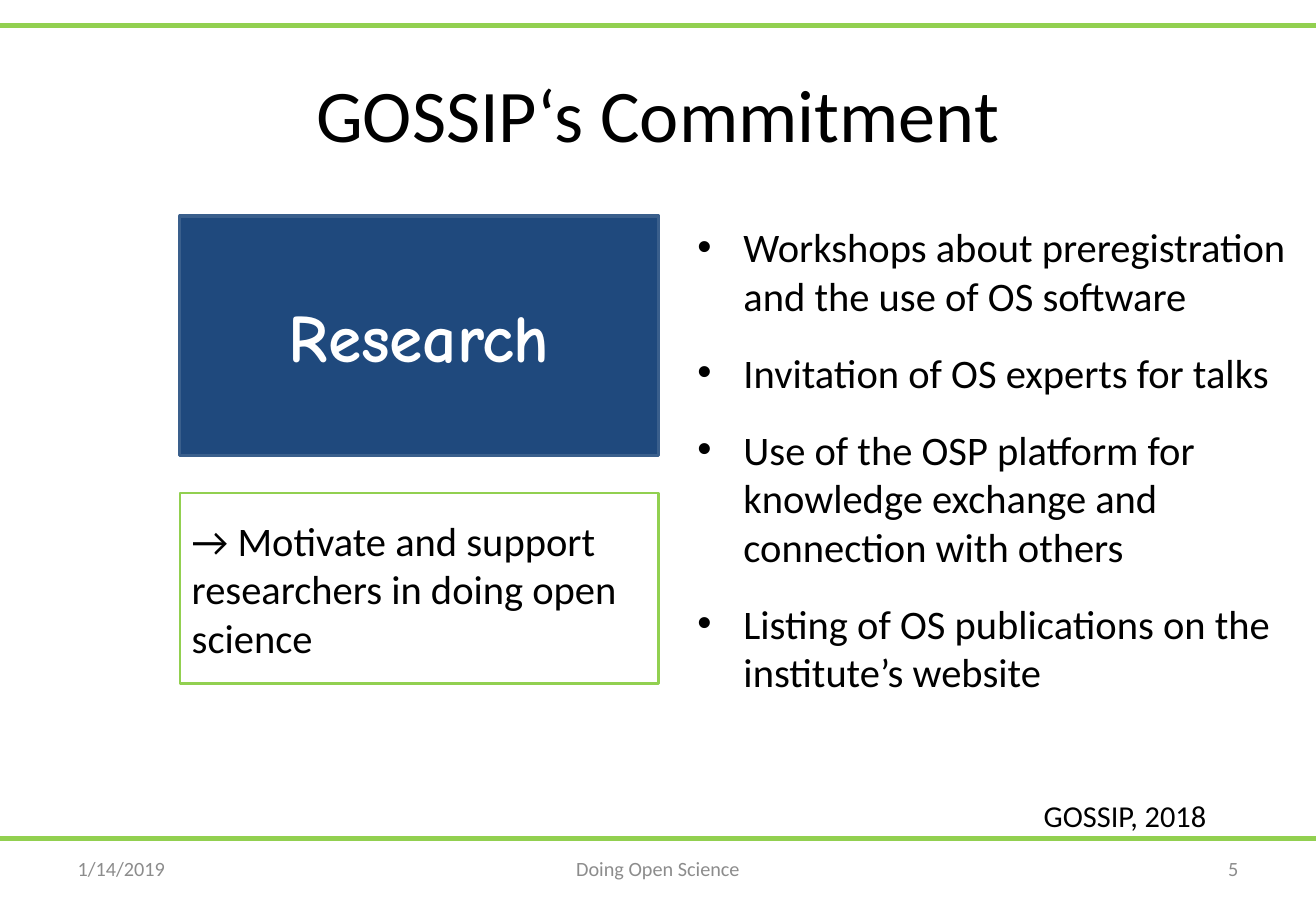
from dataclasses import dataclass
from typing import Optional

from lxml.etree import SubElement
from pptx import Presentation
from pptx.dml.color import RGBColor
from pptx.enum.shapes import MSO_CONNECTOR, MSO_SHAPE
from pptx.enum.text import MSO_ANCHOR, MSO_AUTO_SIZE, PP_ALIGN
from pptx.oxml.ns import qn
from pptx.util import Inches, Pt

BLACK = RGBColor(0x00, 0x00, 0x00)
WHITE = RGBColor(0xFF, 0xFF, 0xFF)
GRAY = RGBColor(0x8C, 0x8C, 0x8C)
GREEN = RGBColor(0x92, 0xD0, 0x50)
NAVY = RGBColor(0x1F, 0x49, 0x7D)
BLUE = RGBColor(0x3A, 0x5F, 0x8C)

WIDE, HIGH = 10.83, 7.5
RULES = (0.21, 6.9)
POINTS = (
    "Workshops about preregistration and the use of OS software",
    "Invitation of OS experts for talks",
    "Use of the OSP platform for knowledge exchange and connection with others",
    "Listing of OS publications on the institute’s website",
)


@dataclass
class Style:
    size: float
    color: RGBColor = BLACK
    align: PP_ALIGN = PP_ALIGN.LEFT
    anchor: MSO_ANCHOR = MSO_ANCHOR.MIDDLE
    font: str = "Calibri"
    bold: bool = False


@dataclass
class Label:
    text: str
    left: float
    top: float
    width: float
    height: float
    style: Style


@dataclass
class Box(Label):
    line: RGBColor
    weight: float
    fill: Optional[RGBColor] = None


LABELS = (
    Label("1/14/2019", 0.54, 6.95, 2.53, 0.4, Style(12, GRAY)),
    Label("Doing Open Science", 3.7, 6.95, 3.43, 0.4,
          Style(12, GRAY, PP_ALIGN.CENTER)),
    Label("5", 7.76, 6.95, 2.53, 0.4, Style(12, GRAY, PP_ALIGN.RIGHT)),
    Label("GOSSIP, 2018", 8.49, 6.51, 1.65, 0.4,
          Style(18, anchor=MSO_ANCHOR.TOP)),
)
BOXES = (
    Box("Research", 1.48, 1.78, 3.94, 1.97,
        Style(40, WHITE, PP_ALIGN.CENTER, font="Comic Neue", bold=True),
        BLUE, 2, NAVY),
    Box("→ Motivate and support researchers in doing open science",
        1.48, 4.06, 3.94, 1.57, Style(24), GREEN, 1.5),
)


def write(frame, text: str, style: Style) -> None:
    frame.text = text
    frame.word_wrap = True
    frame.auto_size = MSO_AUTO_SIZE.NONE
    frame.vertical_anchor = style.anchor
    for para in frame.paragraphs:
        para.alignment = style.align
        for run in para.runs:
            run.font.name = style.font
            run.font.size = Pt(style.size)
            run.font.bold = style.bold
            run.font.color.rgb = style.color


def place(item: Label) -> tuple:
    return tuple(map(Inches, (item.left, item.top, item.width, item.height)))


def draw_rule(slide, top: float) -> None:
    rule = slide.shapes.add_connector(
        MSO_CONNECTOR.STRAIGHT, 0, Inches(top), Inches(WIDE), Inches(top))
    rule.line.color.rgb = GREEN
    rule.line.width = Pt(3)
    SubElement(rule._element.spPr, qn("a:effectLst"))


def draw_title(slide, item: Label) -> None:
    title = slide.shapes.title
    title.left, title.top, title.width, title.height = place(item)
    write(title.text_frame, item.text, item.style)


def draw_label(slide, item: Label):
    label = slide.shapes.add_textbox(*place(item))
    write(label.text_frame, item.text, item.style)
    return label


def draw_list(slide, item: Label) -> None:
    for para in draw_label(slide, item).text_frame.paragraphs:
        para.space_before = Pt(4.8)
        para.space_after = Pt(12)
        props = para._p.get_or_add_pPr()
        props.set("marL", str(Inches(0.38)))
        props.set("indent", str(Inches(-0.38)))
        SubElement(props, qn("a:buFont"), typeface="Arial")
        SubElement(props, qn("a:buChar"), char="•")


def draw_box(slide, item: Box) -> None:
    box = slide.shapes.add_shape(MSO_SHAPE.RECTANGLE, *place(item))
    box.shadow.inherit = False
    if item.fill is None:
        box.fill.background()
    else:
        box.fill.solid()
        box.fill.fore_color.rgb = item.fill
    box.line.color.rgb = item.line
    box.line.width = Pt(item.weight)
    write(box.text_frame, item.text, item.style)


def main() -> None:
    deck = Presentation()
    deck.slide_width, deck.slide_height = Inches(WIDE), Inches(HIGH)
    slide = deck.slides.add_slide(deck.slide_layouts[5])
    for top in RULES:
        draw_rule(slide, top)
    draw_title(slide, Label("GOSSIP‘s Commitment", 0.54, 0.3, 9.75, 1.25,
                            Style(44, align=PP_ALIGN.CENTER)))
    draw_list(slide, Label("\n".join(POINTS), 5.64, 1.78, 5.19, 4.95,
                           Style(24, anchor=MSO_ANCHOR.TOP)))
    for label in LABELS:
        draw_label(slide, label)
    for box in BOXES:
        draw_box(slide, box)
    deck.save("out.pptx")


if __name__ == "__main__":
    main()
